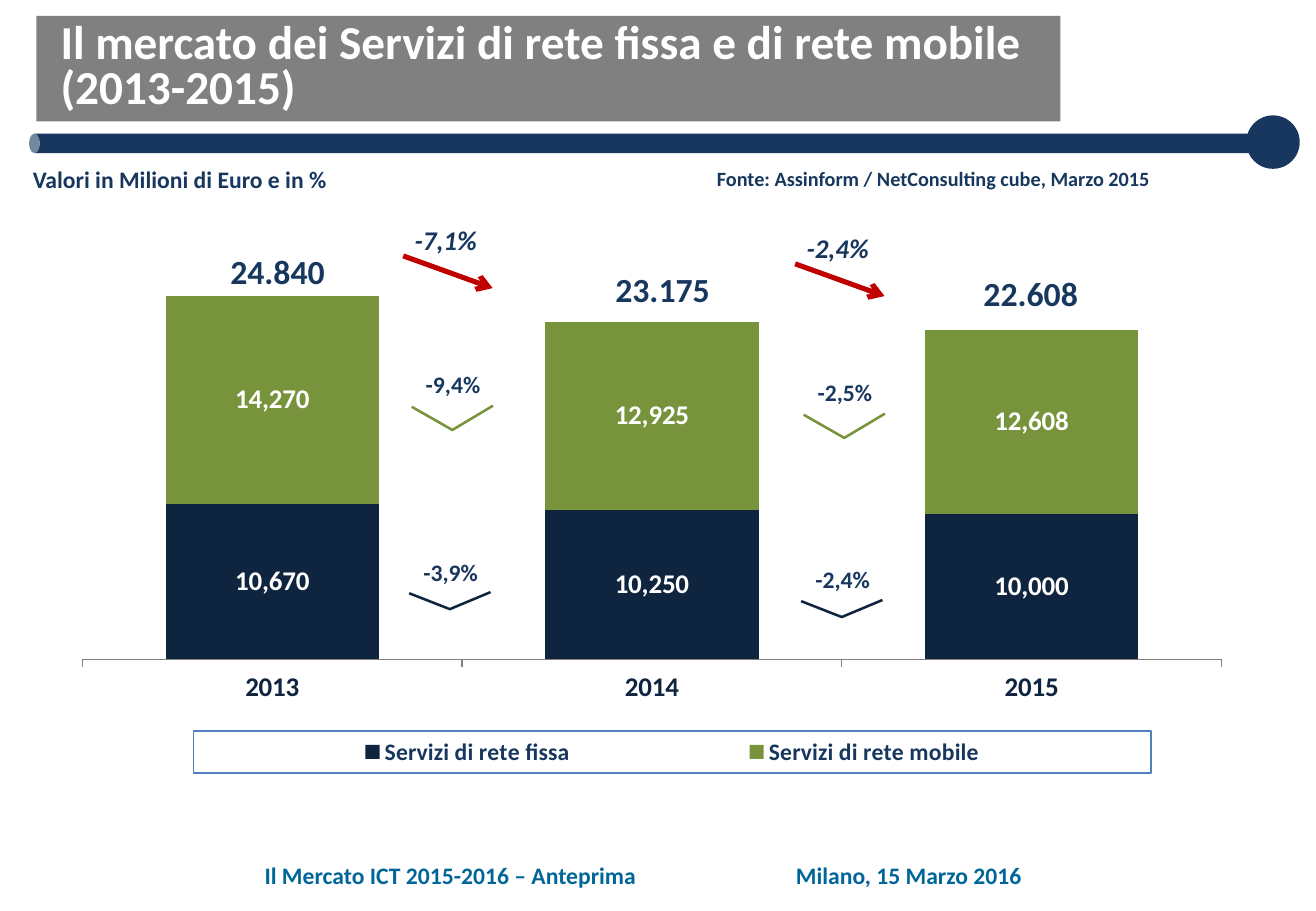
import pptx
import pptx.chart.data
import pptx.dml.color
import pptx.enum.chart
import pptx.enum.shapes
import pptx.enum.text
import pptx.oxml
import pptx.oxml.ns
import pptx.util

Pt = pptx.util.Pt
RGBColor = pptx.dml.color.RGBColor
Shape = pptx.enum.shapes.MSO_SHAPE
Align = pptx.enum.text.PP_ALIGN

NAVY = RGBColor(0x17, 0x37, 0x5E)
DARK = RGBColor(0x0F, 0x24, 0x3E)
GREEN = RGBColor(0x77, 0x93, 0x3C)
RED = RGBColor(0xC0, 0x00, 0x00)
TEAL = RGBColor(0x00, 0x66, 0x99)
GREY = RGBColor(0x80, 0x80, 0x80)
BLUE = RGBColor(0x4F, 0x81, 0xBD)
WHITE = RGBColor(0xFF, 0xFF, 0xFF)

deck = pptx.Presentation()
deck.slide_width, deck.slide_height = Pt(780), Pt(540)
slide = deck.slides.add_slide(deck.slide_layouts[6])
shapes = slide.shapes


def style(font, size, color, italic=None):
    font.name, font.size, font.bold, font.italic = "Calibri", Pt(size), True, italic
    font.color.rgb = color


def add_text(text, left, top, width, height, size, color=NAVY, italic=None):
    box = shapes.add_textbox(Pt(left), Pt(top), Pt(width), Pt(height))
    box.text_frame.word_wrap = False
    paragraph = box.text_frame.paragraphs[0]
    paragraph.text = text
    paragraph.alignment = Align.CENTER
    style(paragraph.font, size, color, italic)
    return box


# Header band: bar, title background, knob
for preset, left, top, width, height, color in (
    (Shape.CAN, 375.1, -278.6, 11.5, 727.2, NAVY),
    (Shape.RECTANGLE, 21.6, 9.4, 607, 62.6, GREY),
    (Shape.OVAL, 738.7, 68.4, 31.7, 31.7, NAVY),
):
    part = shapes.add_shape(preset, Pt(left), Pt(top), Pt(width), Pt(height))
    part.shadow.inherit = False
    part.fill.solid()
    part.fill.fore_color.rgb = color
    part.line.fill.background()
    if preset == Shape.CAN:
        part.rotation = 270
        part.adjustments[0] = 0.55

# Title
title = add_text("Il mercato dei Servizi di rete fissa e di rete mobile\v(2013-2015)",
                 28.8, 10.1, 764.6, 72, 28, WHITE)
title.text_frame.word_wrap = True
title.text_frame.paragraphs[0].alignment = Align.LEFT
title.text_frame.paragraphs[0].line_spacing = 0.8

# Stacked columns
data = pptx.chart.data.CategoryChartData(number_format="#,##0")
data.categories = ["2013", "2014", "2015"]
data.add_series("Servizi di rete fissa", (10670, 10250, 10000))
data.add_series("Servizi di rete mobile", (14270, 12925, 12608))
chart = shapes.add_chart(pptx.enum.chart.XL_CHART_TYPE.COLUMN_STACKED,
                         Pt(38.2), Pt(121.7), Pt(709.2), Pt(341.3), data).chart
chart.has_title = False
chart.font.name, chart.font.size = "Arial", Pt(18)
plot = chart.plots[0]
plot.gap_width, plot.overlap, plot.vary_by_categories = 78, 100, False
for series, color in zip(plot.series, (DARK, GREEN)):
    series.format.fill.solid()
    series.format.fill.fore_color.rgb = color
    labels = series.data_labels
    labels.show_value = True
    labels.number_format, labels.number_format_is_linked = "#,##0", False
    labels.position = pptx.enum.chart.XL_LABEL_POSITION.CENTER
    style(labels.font, 16, WHITE)

# Axes
values = chart.value_axis
values.minimum_scale, values.maximum_scale = 0, 30000
values.has_major_gridlines = False
values.visible = False
years = chart.category_axis
years.major_tick_mark = pptx.enum.chart.XL_TICK_MARK.OUTSIDE
years.format.line.color.rgb = GREY
years.format.line.width = Pt(0.75)
style(years.tick_labels.font, 16, DARK)

# Legend and fixed layout
chart.has_legend = True
legend = chart.legend
legend.position = pptx.enum.chart.XL_LEGEND_POSITION.BOTTOM
legend.include_in_layout = False
style(legend.font, 14, NAVY)
C = pptx.oxml.ns.nsdecls("c", "a")
qn = pptx.oxml.ns.qn
plot_area = chart._chartSpace.chart.plotArea
for owner, index, target, frame in (
    (plot_area, 0, '<c:layoutTarget val="inner"/>', (0.015, 0.03, 0.952, 0.759)),
    (legend._element, 1, "", (0.108, 0.913, 0.8, 0.073)),
):
    for old in owner.findall(qn("c:layout")):
        owner.remove(old)
    sizes = "".join(f'<c:{tag} val="{value}"/>' for tag, value in zip("xywh", frame))
    owner.insert(index, pptx.oxml.parse_xml(
        f'<c:layout {C}><c:manualLayout>{target}<c:xMode val="edge"/><c:yMode val="edge"/>'
        f'{sizes}</c:manualLayout></c:layout>'))
legend._element.find(qn("c:overlay")).addnext(pptx.oxml.parse_xml(
    f'<c:spPr {C}><a:ln w="9525"><a:solidFill><a:srgbClr val="{BLUE}"/></a:solidFill></a:ln></c:spPr>'))

# Unit, source and footer
add_text("Valori in Milioni di Euro e in %", 11.5, 94.3, 190.1, 24.5, 14)
add_text("Fonte: Assinform / NetConsulting cube, Marzo 2015", 416.2, 95, 274.3, 21.6, 12)
add_text("Il Mercato ICT 2015-2016 – Anteprima", 147, 506.9, 240, 24.5, 14, TEAL)
add_text("Milano, 15 Marzo 2016", 463.7, 506.9, 150, 24.5, 14, TEAL)

# Column totals
for total, left, top in (("24.840", 128.9, 145.4), ("23.175", 357.1, 155.5), ("22.608", 575.3, 158.4)):
    add_text(total, left, top, 71.3, 31.7, 20)

# Year-on-year changes: total with arrow, then mobile and fixed with chevrons
for gap, (total, mobile, fixed) in enumerate((("-7,1%", "-9,4%", "-3,9%"), ("-2,4%", "-2,5%", "-2,4%"))):
    dx, dy = gap * 232.3, gap * 4.7
    add_text(total, 238.3 + dx, 128.9 + dy, 51.8, 26.6, 16, italic=True)
    arrow = shapes.add_connector(pptx.enum.shapes.MSO_CONNECTOR.STRAIGHT,
                                 Pt(239 + dx), Pt(151.7 + dy), Pt(292 + dx), Pt(170.8 + dy))
    arrow.line.color.rgb, arrow.line.width = RED, Pt(3)
    arrow.line._get_or_add_ln().append(pptx.oxml.parse_xml(f'<a:tailEnd {C} type="arrow"/>'))
    arrow._element.spPr.append(pptx.oxml.parse_xml(f"<a:effectLst {C}/>"))

    for rate, left, top, tip_left, tip_top, depth, color in (
        (mobile, 244.8, 216, 244.1, 240.5, 14.4, GREEN),
        (fixed, 243.4, 326.9, 242.6, 351, 10.1, DARK),
    ):
        add_text(rate, left + dx, top + dy, 47.5, 24.5, 14)
        x, y = tip_left + dx, tip_top + dy
        outline = shapes.build_freeform(Pt(x), Pt(y + 0.7))
        outline.add_line_segments([(Pt(x + 24.1), Pt(y + depth)), (Pt(x + 48.2), Pt(y))], close=False)
        chevron = outline.convert_to_shape()
        chevron.shadow.inherit = False
        chevron.fill.background()
        chevron.line.color.rgb, chevron.line.width = color, Pt(1.5)

deck.save("out.pptx")
